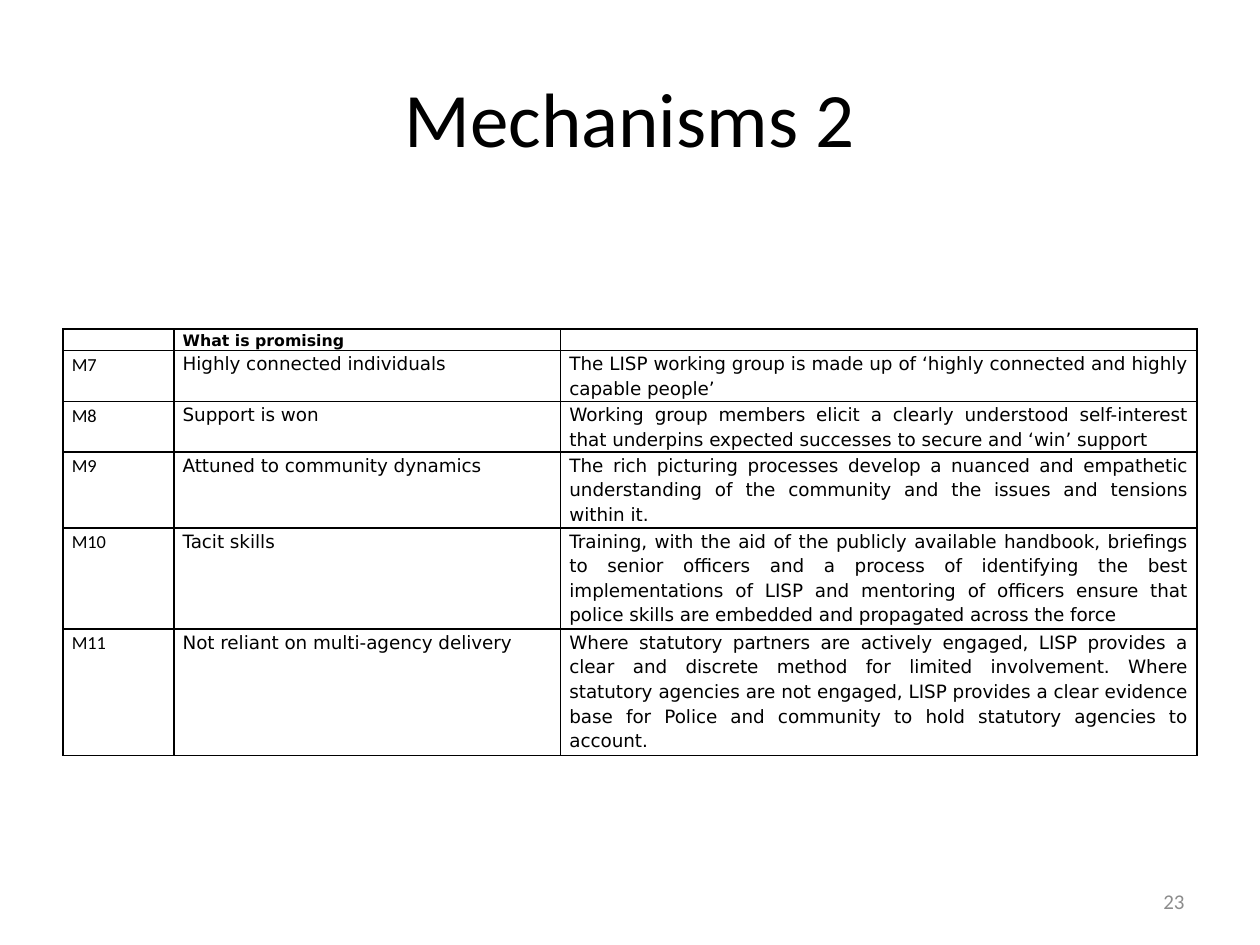
import pptx
import pptx.util
import pptx.dml.color
import pptx.enum.text
import pptx.oxml.ns
import lxml.etree

Inches = pptx.util.Inches
Pt = pptx.util.Pt
ALIGN = pptx.enum.text.PP_ALIGN
MIDDLE = pptx.enum.text.MSO_ANCHOR.MIDDLE
qn = pptx.oxml.ns.qn

COLORS = {"ink": "000000", "page": "8C8C8C"}
SANS = "Calibri"
WIDE = "DejaVu Sans"
WIDTHS = [0.88, 3.07, 5.05]
LINE = 0.19

ROWS = [
    ("", "What is promising", "", 1),
    ("M7", "Highly connected individuals",
     "The LISP working group is made up of ‘highly connected and highly "
     "capable people’ ", 2),
    ("M8", "Support is won",
     "Working group members elicit a clearly understood self-interest that "
     "underpins expected successes to secure and ‘win’ support", 2),
    ("M9", "Attuned to community dynamics",
     "The rich picturing processes develop a nuanced and empathetic "
     "understanding of the community and the issues and tensions within it.", 3),
    ("M10", "Tacit skills",
     "Training, with the aid of the publicly available handbook, briefings to "
     "senior officers and a process of identifying the best implementations of "
     "LISP and mentoring of officers ensure that police skills are embedded and "
     "propagated across the force", 4),
    ("M11", "Not reliant on multi-agency delivery",
     "Where statutory partners are actively engaged, LISP provides a clear and "
     "discrete method for limited involvement. Where statutory agencies are not "
     "engaged, LISP provides a clear evidence base for Police and community to "
     "hold statutory agencies to account.", 5),
]


def add_run(para, text, size, face, color="ink", bold=False):
    run = para.add_run()
    run.text = text
    run.font.size = Pt(size)
    run.font.name = face
    run.font.bold = bold
    run.font.color.rgb = pptx.dml.color.RGBColor.from_string(COLORS[color])


def add_label(slide, box, text, size, align, color):
    frame = slide.shapes.add_textbox(*map(Inches, box)).text_frame
    frame.word_wrap = True
    frame.vertical_anchor = MIDDLE
    para = frame.paragraphs[0]
    para.alignment = align
    add_run(para, text, size, SANS, color)


def add_edges(cell):
    props = cell._tc.get_or_add_tcPr()
    for side in ("a:lnL", "a:lnR", "a:lnT", "a:lnB"):
        edge = lxml.etree.SubElement(props, qn(side), w=str(Pt(1)))
        fill = lxml.etree.SubElement(edge, qn("a:solidFill"))
        lxml.etree.SubElement(fill, qn("a:srgbClr"), val=COLORS["ink"])


def fill_cell(cell, text, size, face, bold):
    cell.margin_left = cell.margin_right = Inches(0.07)
    cell.margin_top = cell.margin_bottom = 0
    add_edges(cell)
    cell.fill.background()
    para = cell.text_frame.paragraphs[0]
    if not text:
        lxml.etree.SubElement(para._p, qn("a:endParaRPr"), sz=str(size * 100))
        return
    para.line_spacing = 1.15
    para.space_after = Pt(10)
    if face == WIDE:
        para.alignment = ALIGN.JUSTIFY
        para.space_before = Pt(10)
    add_run(para, text, size, face, bold=bold)


def add_grid(slide):
    high = LINE * sum(row[-1] for row in ROWS)
    box = (0.5, 2.61, sum(WIDTHS), high)
    grid = slide.shapes.add_table(len(ROWS), len(WIDTHS), *map(Inches, box)).table
    grid.first_row = False
    grid.horz_banding = False
    for col, width in zip(grid.columns, WIDTHS):
        col.width = Inches(width)
    for r, (*texts, lines) in enumerate(ROWS):
        head = r == 0
        grid.rows[r].height = Inches(0.17 if head else LINE * lines)
        for c, text in enumerate(texts):
            face = WIDE if c else SANS
            fill_cell(grid.cell(r, c), text, 9 if head else 10.5, face, head)


def main():
    deck = pptx.Presentation()
    deck.slide_width = Inches(10)
    deck.slide_height = Inches(7.5)
    slide = deck.slides.add_slide(deck.slide_layouts[6])
    add_label(slide, (0.5, 0.3, 9, 1.25), "Mechanisms 2", 44, ALIGN.CENTER, "ink")
    add_label(slide, (7.17, 6.95, 2.33, 0.4), "23", 12, ALIGN.RIGHT, "page")
    add_grid(slide)
    deck.save("out.pptx")


if __name__ == "__main__":
    main()
